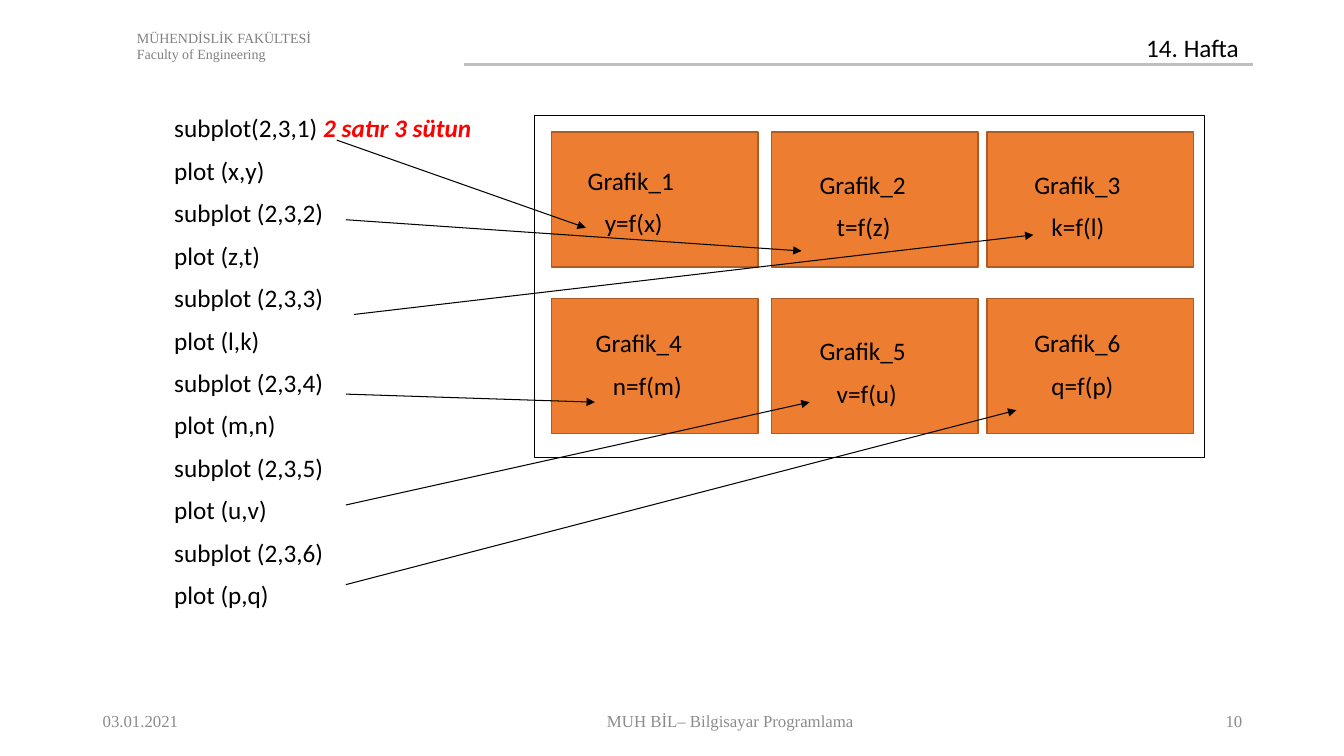
import pptx
import pptx.dml.color
import pptx.enum.shapes
import pptx.enum.text
import pptx.oxml.ns
import pptx.util
from lxml import etree
from pptx.dml.color import RGBColor
from pptx.util import Inches

BLACK = RGBColor(0x00, 0x00, 0x00)
RED = RGBColor(0xFF, 0x00, 0x00)
ORANGE = RGBColor(0xED, 0x7D, 0x31)
BROWN = RGBColor(0xAF, 0x5C, 0x24)
RULE_GREY = RGBColor(0xBF, 0xBF, 0xBF)
FACULTY_GREY = RGBColor(0x80, 0x80, 0x80)
FOOTER_GREY = RGBColor(0x8C, 0x8C, 0x8C)
SANS, SERIF = "Calibri", "Times New Roman"
ALIGN = pptx.enum.text.PP_ALIGN

FACULTY = ["MÜHENDİSLİK FAKÜLTESİ", "Faculty of Engineering"]
WEEK = "14. Hafta"
GRID_NOTE = "2 satır 3 sütun"
COMMANDS = [
    "subplot(2,3,1) ", "plot (x,y)",
    "subplot (2,3,2)", "plot (z,t)",
    "subplot (2,3,3)", "plot (l,k)",
    "subplot (2,3,4)", "plot (m,n)",
    "subplot (2,3,5)", "plot (u,v)",
    "subplot (2,3,6)", "plot (p,q)",
]
# formula, label corner, arrow start, arrow end
GRAPHS = [
    ("y=f(x)", (5.73, 1.59), (3.34, 1.39), (5.81, 2.26)),
    ("t=f(z)", (8.03, 1.63), (3.43, 2.18), (7.95, 2.49)),
    ("k=f(l)", (10.16, 1.63), (3.51, 3.12), (10.25, 2.33)),
    ("n=f(m)", (5.81, 3.2), (3.43, 3.91), (5.9, 3.99)),
    ("v=f(u)", (8.03, 3.28), (3.43, 5.01), (8.03, 3.99)),
    ("q=f(p)", (10.16, 3.2), (3.43, 5.8), (10.08, 4.07)),
]
FOOTER = [
    ("03.01.2021", 0.92, 1.57, ALIGN.LEFT),
    ("MUH BİL– Bilgisayar Programlama", 2.73, 9.03, ALIGN.CENTER),
    ("10", 11.97, 0.45, ALIGN.RIGHT),
]
FRAME = (5.3, 1.15, 6.65, 3.39)
COLUMN_LEFTS = (5.47, 7.65, 9.79)
ROW_TOPS = (1.31, 2.96)
PANEL_SIZE = (2.05, 1.34)
LINE_GAP = 8.7
FORMULA_INDENT = 0.17


def add_text(shapes, box, lines, size, font, color, gap=0, align=ALIGN.LEFT):
    """Add a text box with one paragraph per line and return its frame."""
    frame = shapes.add_textbox(*map(Inches, box)).text_frame
    frame.word_wrap = True
    for number, line in enumerate(lines):
        paragraph = frame.add_paragraph() if number else frame.paragraphs[0]
        paragraph.alignment = align
        paragraph.space_before = pptx.util.Pt(gap if number else 0)
        add_run(paragraph, line, size, font, color)
    return frame


def add_run(paragraph, text, size, font, color):
    run = paragraph.add_run()
    run.text = text
    run.font.size = pptx.util.Pt(size)
    run.font.name = font
    run.font.color.rgb = color
    return run


def add_rectangle(shapes, box, line_color, line_width, fill=None):
    rectangle = shapes.add_shape(
        pptx.enum.shapes.MSO_SHAPE.RECTANGLE, *map(Inches, box))
    rectangle.shadow.inherit = False
    if fill is None:
        rectangle.fill.background()
    else:
        rectangle.fill.solid()
        rectangle.fill.fore_color.rgb = fill
    rectangle.line.color.rgb = line_color
    rectangle.line.width = pptx.util.Pt(line_width)


def add_line(shapes, start, end, color, width, arrow=False):
    connector = shapes.add_connector(
        pptx.enum.shapes.MSO_CONNECTOR.STRAIGHT, *map(Inches, start + end))
    connector.line.color.rgb = color
    connector.line.width = pptx.util.Pt(width)
    properties = connector._element.spPr
    if arrow:
        outline = properties.find(pptx.oxml.ns.qn("a:ln"))
        etree.SubElement(outline, pptx.oxml.ns.qn("a:tailEnd"), type="triangle")
    etree.SubElement(properties, pptx.oxml.ns.qn("a:effectLst"))


def main():
    deck = pptx.Presentation()
    deck.slide_width, deck.slide_height = Inches(13.33), Inches(7.5)
    shapes = deck.slides.add_slide(deck.slide_layouts[6]).shapes

    add_line(shapes, (4.6, 0.64), (12.43, 0.64), RULE_GREY, 1.5)
    add_text(shapes, (1.26, 0.24, 6.67, 0.44), FACULTY, 10, SERIF, FACULTY_GREY)
    add_text(shapes, (11.27, 0.27, 1.15, 0.4), [WEEK], 18, SANS, BLACK)

    commands = add_text(shapes, (1.63, 1.07, 3.93, 5.37), COMMANDS, 18, SANS,
                        BLACK, LINE_GAP)
    note = add_run(commands.paragraphs[0], GRID_NOTE, 18, SANS, RED)
    note.font.bold = note.font.italic = True

    figure = shapes.add_group_shape().shapes
    add_rectangle(figure, FRAME, BLACK, 0.75)
    for top in ROW_TOPS:
        for left in COLUMN_LEFTS:
            add_rectangle(figure, (left, top) + PANEL_SIZE, BROWN, 1, ORANGE)
    for number, (formula, corner, start, end) in enumerate(GRAPHS, 1):
        label = add_text(figure, corner + (1.45, 0.85),
                         [f"Grafik_{number}", formula], 18, SANS, BLACK, LINE_GAP)
        indent = label.paragraphs[1]._p.get_or_add_pPr()
        indent.set("marL", str(Inches(FORMULA_INDENT)))
        add_line(shapes, start, end, BLACK, 0.75, arrow=True)

    for text, left, width, align in FOOTER:
        footer = add_text(shapes, (left, 6.95, width, 0.4), [text], 12, SERIF,
                          FOOTER_GREY, align=align)
        footer.vertical_anchor = pptx.enum.text.MSO_ANCHOR.MIDDLE

    deck.save("out.pptx")


if __name__ == "__main__":
    main()
